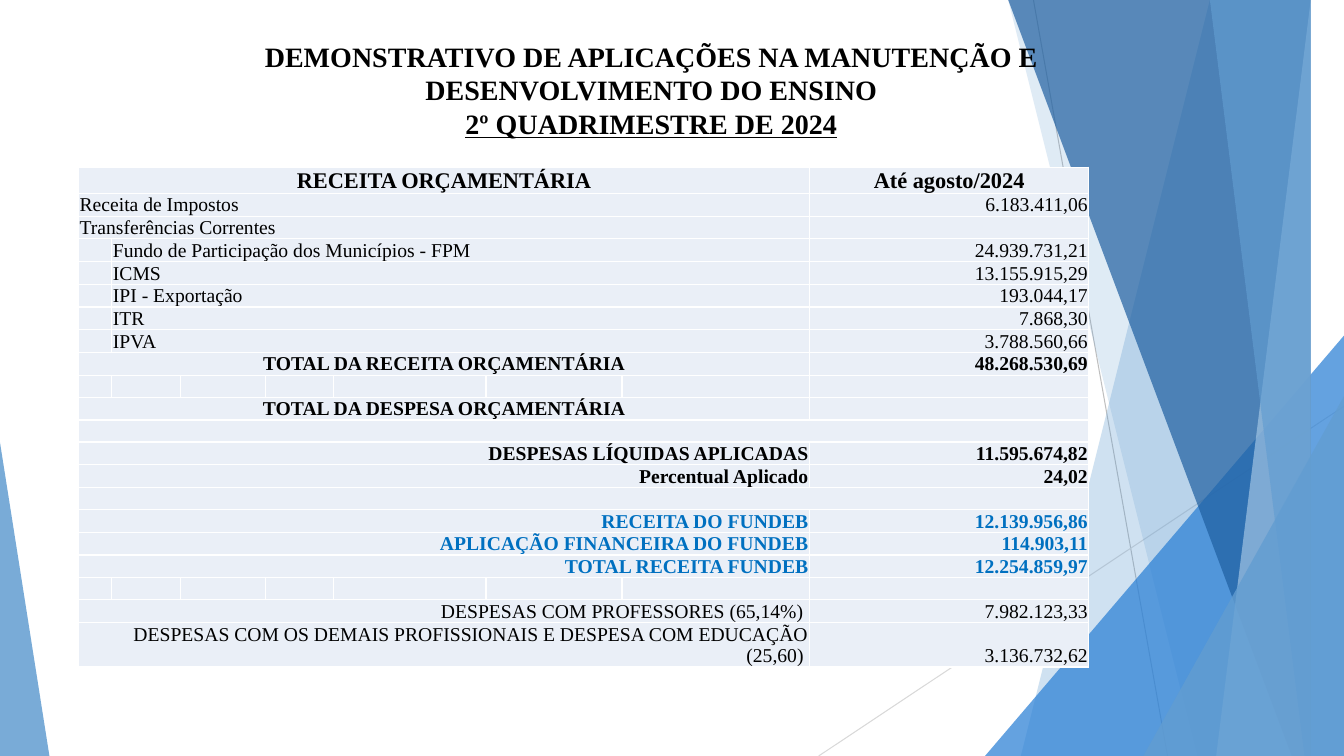
from dataclasses import dataclass

import pptx
import pptx.dml.color
import pptx.enum.shapes
import pptx.enum.text
import pptx.oxml.ns
import pptx.util
from lxml import etree

Inches, Pt = pptx.util.Inches, pptx.util.Pt
qn = pptx.oxml.ns.qn
ALIGN = pptx.enum.text.PP_ALIGN
FONT = "Times New Roman"
BLACK, BLUE, WHITE, CELL = "000000", "0070C0", "FFFFFF", "EAEFF7"
W, H = 13.33, 7.5


@dataclass
class Line:
    start: tuple[float, float]
    end: tuple[float, float]
    color: str


@dataclass
class Band:
    """Facet from the top edge (x0 to the right) down to the bottom edge."""
    top_x: float
    bottom_x: float
    color: str
    alpha: int


@dataclass
class Triangle:
    left: float
    top: float
    width: float
    apex: float
    color: str
    alpha: int


@dataclass
class Row:
    label: str = ""
    value: str = ""
    align: ALIGN = ALIGN.LEFT
    bold: bool = False
    color: str = BLACK
    size: int = 14
    spans: tuple[tuple[int, int], ...] = ((0, 6),)
    height: float = 0.22


def rgb(color: str) -> pptx.dml.color.RGBColor:
    return pptx.dml.color.RGBColor.from_string(color)


def style_facet(sp, color: str, alpha: int) -> None:
    sp.shadow.inherit = False
    sp.fill.solid()
    sp.fill.fore_color.rgb = rgb(color)
    clr = next(sp.element.iter(qn("a:srgbClr")))
    etree.SubElement(clr, qn("a:alpha"), val=str(alpha * 1000))
    sp.line.fill.background()


def draw_line(s, line: Line) -> None:
    x1, y1, x2, y2 = map(Inches, line.start + line.end)
    c = s.shapes.add_connector(pptx.enum.shapes.MSO_CONNECTOR.STRAIGHT, x1, y1, x2, y2)
    c.line.color.rgb = rgb(line.color)
    c.line.width = Pt(0.75)
    etree.SubElement(c.element.spPr, qn("a:effectLst"))


def draw_band(s, band: Band) -> None:
    fb = s.shapes.build_freeform(band.top_x, -0.01, scale=Inches(1))
    fb.add_line_segments([(W, -0.01), (W, H), (band.bottom_x, H)], close=True)
    style_facet(fb.convert_to_shape(), band.color, band.alpha)


def draw_triangle(s, t: Triangle) -> None:
    sp = s.shapes.add_shape(pptx.enum.shapes.MSO_SHAPE.ISOSCELES_TRIANGLE, Inches(t.left),
                            Inches(t.top), Inches(t.width), Inches(H - t.top))
    sp.adjustments[0] = t.apex
    style_facet(sp, t.color, t.alpha)


def format_run(r, size: int, color: str, bold: bool) -> None:
    r.font.name, r.font.size, r.font.bold = FONT, Pt(size), bold
    r.font.color.rgb = rgb(color)


def format_cell(cell) -> None:
    cell.margin_left = cell.margin_right = cell.margin_top = Inches(0.01)
    cell.margin_bottom = 0
    cell.vertical_anchor = pptx.enum.text.MSO_ANCHOR.BOTTOM
    tc_pr = cell.fill and next(cell._tc.iter(qn("a:tcPr")))
    for side in ("lnL", "lnR", "lnT", "lnB"):
        ln = etree.SubElement(tc_pr, qn(f"a:{side}"), w=str(Pt(1)))
        fill = etree.SubElement(ln, qn("a:solidFill"))
        etree.SubElement(fill, qn("a:srgbClr"), val=WHITE)
    cell.fill.solid()
    cell.fill.fore_color.rgb = rgb(CELL)


def fill_cell(cell, text: str, row: Row, align: ALIGN) -> None:
    p = cell.text_frame.paragraphs[0]
    if not text:
        return
    p.text = text
    p.alignment = align
    format_run(p.runs[0], row.size, row.color, row.bold)


def draw_table(s, rows: list[Row], widths: list[float]) -> None:
    frame = s.shapes.add_table(len(rows), len(widths), Inches(0.78), Inches(1.66),
                               Inches(sum(widths)), Inches(sum(r.height for r in rows)))
    tbl = frame.table
    tbl.first_row = tbl.horz_banding = False
    for col, width in zip(tbl.columns, widths):
        col.width = Inches(width)
    for i, row in enumerate(rows):
        tbl.rows[i].height = Inches(row.height)
        for cell in tbl.rows[i].cells:
            format_cell(cell)
        for first, last in row.spans:
            tbl.cell(i, first).merge(tbl.cell(i, last))
        label_col = row.spans[0][0] if row.spans else 0
        fill_cell(tbl.cell(i, label_col), row.label, row, row.align)
        value_align = ALIGN.CENTER if i == 0 else ALIGN.RIGHT
        fill_cell(tbl.cell(i, 7), row.value, row, value_align)
    # Empty cells keep a small text size so that rows stay low
    for cell in tbl.iter_cells():
        if not cell.text_frame.text:
            p = next(cell._tc.iter(qn("a:p")))
            etree.SubElement(p, qn("a:endParaRPr"), sz="1200")


def draw_title(s) -> None:
    title = s.shapes.title
    title.left, title.top, title.width, title.height = map(Inches, (1.76, 0.34, 9.4, 1.44))
    tf = title.text_frame
    tf.word_wrap = True
    tf.auto_size = pptx.enum.text.MSO_AUTO_SIZE.NONE
    tf.vertical_anchor = pptx.enum.text.MSO_ANCHOR.TOP
    p = tf.paragraphs[0]
    p.text = ("DEMONSTRATIVO DE APLICAÇÕES NA MANUTENÇÃO E DESENVOLVIMENTO DO ENSINO\n"
              "2º QUADRIMESTRE DE 2024")
    p.alignment = ALIGN.CENTER
    for r in p.runs:
        format_run(r, 20, BLACK, True)
    p.runs[-1].font.underline = True
    for br in title.element.iter(qn("a:br")):
        etree.SubElement(br, qn("a:rPr"), sz="2000")
    # Bring the title in front of the facets
    title.element.getparent().append(title.element)


FACETS = [
    Line((10.25, 0), (11.58, H), "BFBFBF"),
    Line((W, 4.03), (8.12, H), "D9D9D9"),
    Band(12.28, 10.04, "629DD1", 30),
    Band(10.5, 11.83, "629DD1", 20),
    Triangle(9.77, 3.33, 3.56, 1, "297FD5", 72),
    Band(10.21, 12.91, "1F5FA0", 70),
    Band(13.03, 11.92, "A1C4E3", 70),
    Band(11.96, 13.18, "629DD1", 65),
    Triangle(11.34, 3.93, 1.99, 1, "629DD1", 80),
    Triangle(0, 4.39, 0.49, 0, "629DD1", 85),
]
DRAW = {Line: draw_line, Band: draw_band, Triangle: draw_triangle}

INDENTED = ((1, 6),)
FULL = ((0, 7),)
C, R = ALIGN.CENTER, ALIGN.RIGHT
COLUMNS = [0.33, 0.68, 0.84, 0.68, 1.51, 1.35, 1.86, 2.77]
ROWS = [
    Row("RECEITA ORÇAMENTÁRIA", "Até agosto/2024", C, True, size=16, height=0.26),
    Row("Receita de Impostos", "6.183.411,06"),
    Row("Transferências Correntes"),
    Row("Fundo de Participação dos Municípios - FPM", "24.939.731,21", spans=INDENTED),
    Row("ICMS", "13.155.915,29", spans=INDENTED),
    Row("IPI - Exportação", "193.044,17", spans=INDENTED),
    Row("ITR", "7.868,30", spans=INDENTED),
    Row("IPVA", "3.788.560,66", spans=INDENTED),
    Row("TOTAL DA RECEITA ORÇAMENTÁRIA", "48.268.530,69", C, True),
    Row(spans=()),
    Row("TOTAL DA DESPESA ORÇAMENTÁRIA", "", C, True),
    Row(spans=FULL),
    Row("DESPESAS LÍQUIDAS APLICADAS", "11.595.674,82", R, True),
    Row("Percentual Aplicado", "24,02", R, True),
    Row(spans=FULL),
    Row("RECEITA DO FUNDEB", "12.139.956,86", R, True, BLUE),
    Row("APLICAÇÃO FINANCEIRA DO FUNDEB", "114.903,11", R, True, BLUE),
    Row("TOTAL RECEITA FUNDEB", "12.254.859,97", R, True, BLUE),
    Row(spans=()),
    Row("DESPESAS COM PROFESSORES (65,14%) ", "7.982.123,33", R),
    Row("DESPESAS COM OS DEMAIS PROFISSIONAIS E DESPESA COM EDUCAÇÃO (25,60) ",
        "3.136.732,62", R, height=0.43),
]


def main() -> None:
    prs = pptx.Presentation()
    prs.slide_width, prs.slide_height = Inches(W), Inches(H)
    s = prs.slides.add_slide(prs.slide_layouts[5])
    for facet in FACETS:
        DRAW[type(facet)](s, facet)
    draw_title(s)
    draw_table(s, ROWS, COLUMNS)
    prs.save("out.pptx")


if __name__ == "__main__":
    main()
